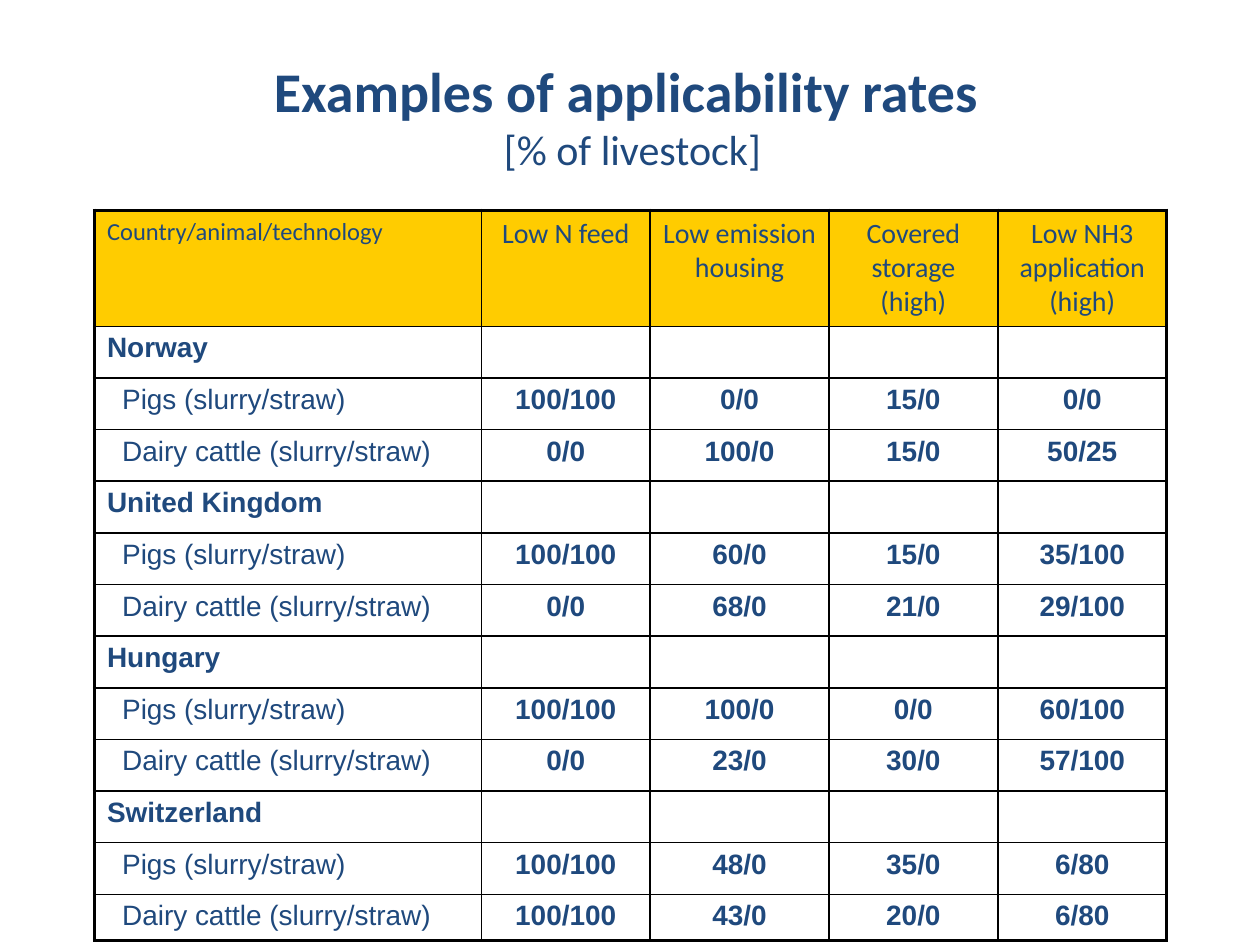
import lxml.etree
import pptx
import pptx.dml.color
import pptx.enum.text
import pptx.oxml.ns
import pptx.util

Inches = pptx.util.Inches
CENTER = pptx.enum.text.PP_ALIGN.CENTER
NAVY, AMBER, BLACK = "1F497D", "FFCC00", "000000"


def color(hex_string):
    return pptx.dml.color.RGBColor.from_string(hex_string)


def add_span(para, text, **formats):
    span = para.add_run()
    span.text = text
    span.font.color.rgb = color(NAVY)
    for name, value in formats.items():
        setattr(span.font, name, value)


deck = pptx.Presentation()
deck.slide_width, deck.slide_height = Inches(10), Inches(7.5)
page = deck.slides.add_slide(deck.slide_layouts[6])

# Title with the unit on a second line
box = page.shapes.add_textbox(Inches(0.77), Inches(0.58), Inches(8.5), Inches(0.67))
box.text_frame.word_wrap = True
box.text_frame.vertical_anchor = pptx.enum.text.MSO_ANCHOR.MIDDLE
para = box.text_frame.paragraphs[0]
para.alignment = CENTER
add_span(para, "Examples of applicability rates ", name="Calibri", size=pptx.util.Pt(32), bold=True)
para.add_line_break()
add_span(para, "[% of livestock]", name="Calibri", size=pptx.util.Pt(24), bold=False)

# Table contents
headers = ["Country/animal/technology", "Low N feed", "Low emission housing",
           "Covered storage (high)", "Low NH3 application (high)"]
animals = ["Pigs (slurry/straw)", "Dairy cattle (slurry/straw)"]
rates = {
    "Norway": [["100/100", "0/0", "15/0", "0/0"], ["0/0", "100/0", "15/0", "50/25"]],
    "United Kingdom": [["100/100", "60/0", "15/0", "35/100"], ["0/0", "68/0", "21/0", "29/100"]],
    "Hungary": [["100/100", "100/0", "0/0", "60/100"], ["0/0", "23/0", "30/0", "57/100"]],
    "Switzerland": [["100/100", "48/0", "35/0", "6/80"], ["100/100", "43/0", "20/0", "6/80"]],
}
rows = [headers]
for country, country_rates in rates.items():
    rows.append([country, "", "", "", ""])
    rows += [[animal, *values] for animal, values in zip(animals, country_rates)]

# Table grid
widths = [3.07, 1.34, 1.42, 1.34, 1.34]
heights = [0.92] + [0.41] * (len(rows) - 2) + [0.35]
table = page.shapes.add_table(len(rows), len(widths), Inches(0.75), Inches(1.67),
                              Inches(sum(widths)), Inches(sum(heights))).table
table.first_row = table.horz_banding = False
for column, width in zip(table.columns, widths):
    column.width = Inches(width)
for row, height in zip(table.rows, heights):
    row.height = Inches(height)

# Cells: thick outer frame, thin inner lines
last_row, last_column = len(rows) - 1, len(widths) - 1
for r, texts in enumerate(rows):
    for c, text in enumerate(texts):
        cell = table.cell(r, c)
        properties = cell._tc.get_or_add_tcPr()
        outer_sides = {"lnL": c == 0, "lnR": c == last_column,
                       "lnT": r == 0, "lnB": r == last_row}
        for side, is_outer in outer_sides.items():
            line = lxml.etree.SubElement(properties, pptx.oxml.ns.qn("a:" + side),
                                         w=str(pptx.util.Pt(2.25 if is_outer else 1)))
            fill = lxml.etree.SubElement(line, pptx.oxml.ns.qn("a:solidFill"))
            lxml.etree.SubElement(fill, pptx.oxml.ns.qn("a:srgbClr"), val=BLACK)

        is_header = r == 0
        is_animal = c == 0 and text in animals
        if is_header:
            cell.fill.solid()
            cell.fill.fore_color.rgb = color(AMBER)
        else:
            cell.fill.background()
        if is_animal:
            cell.margin_left = Inches(0.22)

        para = cell.text_frame.paragraphs[0]
        if c > 0:
            para.alignment = CENTER
        formats = {
            "name": "Calibri" if is_header else "Arial",
            "size": pptx.util.Pt(14 if is_header and c == 0 else 16),
            "bold": not is_header and not is_animal,
        }
        if text:
            add_span(para, text, **formats)
        else:
            para.font.size = formats["size"]

deck.save("out.pptx")
